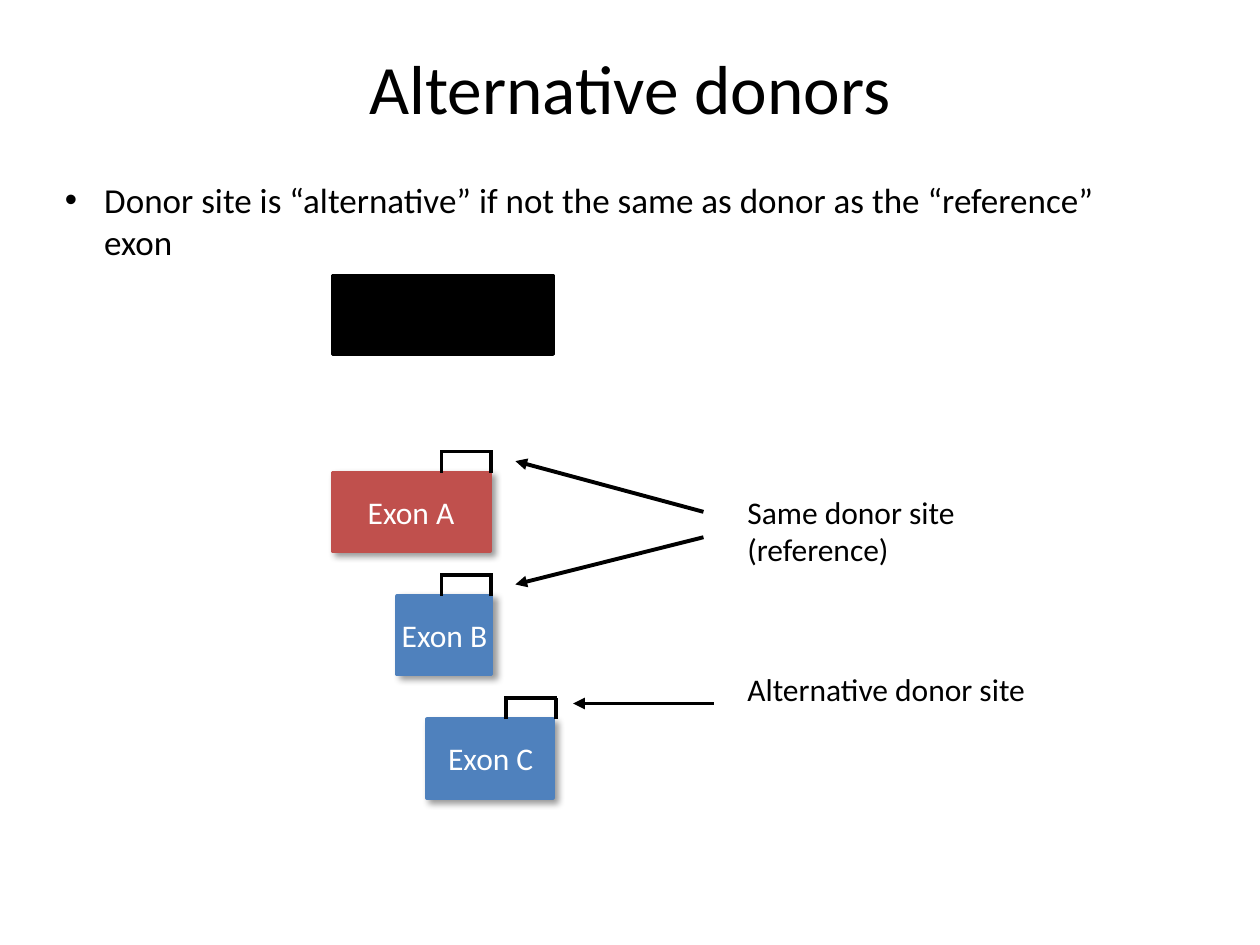
from lxml import etree
from pptx import Presentation
from pptx.dml.color import RGBColor
from pptx.enum.shapes import MSO_CONNECTOR, MSO_SHAPE
from pptx.enum.text import MSO_ANCHOR, PP_ALIGN
from pptx.oxml.ns import qn
from pptx.util import Pt

LINE = MSO_CONNECTOR.STRAIGHT
RECT = MSO_SHAPE.RECTANGLE
MIDDLE = MSO_ANCHOR.MIDDLE
CENTER = PP_ALIGN.CENTER

BLACK, WHITE, RED, BLUE = "000000", "FFFFFF", "C0504D", "4F81BD"


def color(text):
    return RGBColor.from_string(text)


class Deck:
    font = "Calibri"
    stroke = 2.25

    def __init__(self, wide, high):
        self.prs = Presentation()
        self.prs.slide_width, self.prs.slide_height = Pt(wide), Pt(high)
        self.slide = self.prs.slides.add_slide(self.prs.slide_layouts[5])
        self.shapes = self.slide.shapes

    def style(self, frame, text, size, ink):
        frame.word_wrap = True
        frame.text = text
        para = frame.paragraphs[0]
        para.font.name, para.font.size = self.font, Pt(size)
        para.font.color.rgb = color(ink)
        return para

    def title(self, text, x, y, w, h):
        shape = self.shapes.title
        shape.left, shape.top, shape.width, shape.height = map(Pt, (x, y, w, h))
        shape.text_frame.vertical_anchor = MIDDLE
        self.style(shape.text_frame, text, 39.6, BLACK).alignment = CENTER

    def text(self, text, x, y, w, h, size=18, ink=BLACK):
        box = self.shapes.add_textbox(Pt(x), Pt(y), Pt(w), Pt(h))
        return self.style(box.text_frame, text, size, ink)

    def bullet(self, text, x, y, w, h, indent):
        props = self.text(text, x, y, w, h, 20)._p.get_or_add_pPr()
        props.set("marL", str(Pt(indent)))
        props.set("indent", str(-Pt(indent)))
        etree.SubElement(props, qn("a:buFont"), typeface="Arial")
        etree.SubElement(props, qn("a:buChar"), char="•")

    def box(self, x, y, w, h, fill, shade=True):
        shape = self.shapes.add_shape(RECT, Pt(x), Pt(y), Pt(w), Pt(h))
        shape.fill.solid()
        shape.fill.fore_color.rgb = shape.line.color.rgb = color(fill)
        shape.line.width = Pt(2)
        shape.shadow.inherit = False
        if shade:
            effects = shape._element.spPr.find(qn("a:effectLst"))
            outer = etree.SubElement(
                effects, qn("a:outerShdw"), blurRad=str(Pt(4)), dist=str(Pt(3)),
                dir="2700000", algn="tl", rotWithShape="0")
            tone = etree.SubElement(outer, qn("a:srgbClr"), val=BLACK)
            etree.SubElement(tone, qn("a:alpha"), val="40000")

    def line(self, x1, y1, x2, y2, group=None, arrow=False):
        shapes = group.shapes if group else self.shapes
        line = shapes.add_connector(LINE, Pt(x1), Pt(y1), Pt(x2), Pt(y2))
        line.line.color.rgb = color(BLACK)
        line.line.width = Pt(self.stroke)
        if arrow:
            etree.SubElement(line.line._get_or_add_ln(), qn("a:tailEnd"), type="triangle")
        etree.SubElement(line._element.spPr, qn("a:effectLst"))

    def bracket(self, right, base, w=28.5, h=12):
        group = self.shapes.add_group_shape()
        left, top = right - w, base - h
        for x in (left, right):
            self.line(x, base, x, top, group)
        self.line(right + 0.75, top, left - 0.75, top, group)


def main():
    deck = Deck(720, 540)
    deck.title("Alternative donors", 36, 21.6, 648, 56)

    # Exons: name, fill, left, width, bracket right, label left, label width
    exons = [
        ("Exon A", RED, 190, 90, 280.8, 203, 82),
        ("Exon B", BLUE, 227, 54, 280.8, 222.5, 116),
        ("Exon C", BLUE, 244, 72, 317.5, 249, 78),
    ]
    top, step, high = 270, 70.5, 45
    for row, (name, fill, x, w, right, tx, tw) in enumerate(exons):
        y = top + row * step
        deck.box(x, y, w, high, fill)
        deck.bracket(right, y)
        deck.text(name, tx, y + 8, tw, 29, ink=WHITE)
    deck.box(190, 157.5, 126, high, BLACK, shade=False)

    # Definition
    deck.bullet("Donor site is “alternative” if not the same as donor as the "
                "“reference” exon", 30, 98.6, 623.5, 55.5, 22.5)

    # Arrows to the donor sites
    for ends in ((402, 292.5, 294.5, 263.5), (402, 307, 294.5, 334),
                 (408, 402, 327.5, 402)):
        deck.line(*ends, arrow=True)

    # Notes on the donor sites
    deck.text("Same donor site (reference)", 420, 278, 186, 51)
    deck.text("Alternative donor site", 420, 379.5, 186, 29)

    deck.prs.save("out.pptx")


if __name__ == "__main__":
    main()
